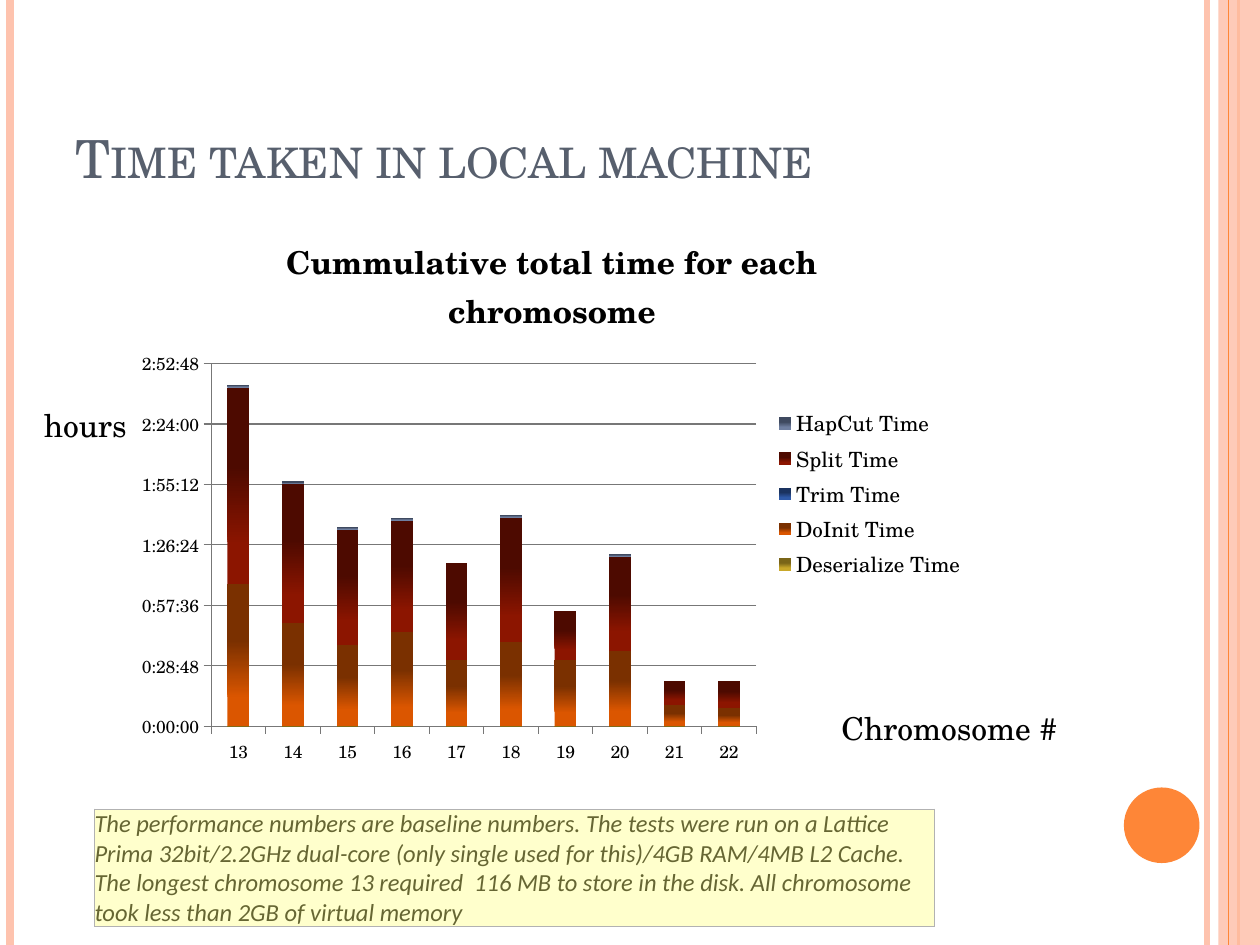
from lxml.etree import SubElement
from pptx import Presentation
from pptx.chart.data import CategoryChartData
from pptx.dml.color import RGBColor
from pptx.enum.chart import XL_CHART_TYPE as ChartType, XL_LEGEND_POSITION as LegendPos, XL_TICK_MARK as Tick
from pptx.enum.shapes import MSO_CONNECTOR as Connector, MSO_SHAPE as Shape
from pptx.enum.text import MSO_ANCHOR as Anchor
from pptx.oxml import parse_xml
from pptx.oxml.ns import nsdecls, qn
from pptx.util import Inches, Pt

WIDTH, HEIGHT = 10, 7.5
SERIF, SANS = "TeX Gyre Schola", "Calibri"
PEACH, ORANGE, BLACK, GRID = "FEC3AE", "FE8637", "000000", "777777"

# x, colour, points
RULES_BELOW = [(9.58, PEACH, 3), (0.08, PEACH, 4.5), (9.83, ORANGE, 1.5)]
RULES_ABOVE = [(9.75, ORANGE, 0.75)]

# text, box, size, colour, extra run attributes, anchor
LABELS = [
    ("Time taken in local machine", (0.5, 0.3, 8.17, 1.25), 30, "575F6D", {"cap": "small"}, Anchor.BOTTOM),
    ("Chromosome #", (6.58, 5.58, 2.17, 0.4), 18, BLACK, {}, Anchor.TOP),
    ("hours", (0.25, 3.17, 0.92, 0.4), 18, BLACK, {}, Anchor.TOP),
]

CHART_TITLE = "Cummulative total time for each chromosome"
CHART_BOX = (1, 1.67, 6.76, 4.5)
PLOT_SHARES = {"x": 0.1, "y": 0.27, "w": 0.64, "h": 0.64}
CHROMOSOMES = [str(number) for number in range(13, 23)]
# name, share of a day per chromosome, bright and dark end of the bar
STEPS = [
    ("Deserialize Time", [0] * 10, "C9A82A", "7A6518"),
    ("DoInit Time", [0.047, 0.034, 0.027, 0.031, 0.022, 0.028, 0.022, 0.025, 0.007, 0.006], "DB5600", "7A3000"),
    ("Trim Time", [0] * 10, "2F5AA8", "1A3360"),
    ("Split Time", [0.065, 0.046, 0.038, 0.037, 0.032, 0.041, 0.016, 0.031, 0.008, 0.009], "8C1500", "4D0A00"),
    ("HapCut Time", [0.001, 0.001, 0.001, 0.001, 0, 0.001, 0, 0.001, 0, 0], "6F7FA0", "3F4A60"),
]

NOTE_BOX = (0.75, 6.42, 6.67, 0.93)
NOTES = [
    "The performance numbers are baseline numbers. The tests were run on a Lattice Prima "
    "32bit/2.2GHz dual-core (only single used for this)/4GB RAM/4MB L2 Cache.",
    "The longest chromosome 13 required  116 MB to store in the disk. "
    "All chromosome took less than 2GB of virtual memory",
]


def rgb(code):
    return RGBColor.from_string(code)


def inches(box):
    return [Inches(length) for length in box]


def style_font(font, color=BLACK, **formats):
    font.color.rgb = rgb(color)
    for attribute, value in formats.items():
        setattr(font, attribute, value)


def add_rules(slide, rules):
    for x, color, points in rules:
        rule = slide.shapes.add_connector(Connector.STRAIGHT, *inches((x, 0, x, HEIGHT)))
        rule.line.color.rgb = rgb(color)
        rule.line.width = Pt(points)
        SubElement(rule.element.spPr, qn("a:effectLst"))


def add_solid(slide, preset, box, color, opacity=100):
    solid = slide.shapes.add_shape(preset, *inches(box))
    solid.shadow.inherit = False
    solid.fill.solid()
    solid.fill.fore_color.rgb = rgb(color)
    solid.line.fill.background()
    if opacity < 100:
        tint = solid.element.spPr.find(qn("a:solidFill"))[0]
        SubElement(tint, qn("a:alpha"), val=str(opacity * 1000))


def add_label(slide, text, box, size, color, extras, anchor):
    frame = slide.shapes.add_textbox(*inches(box)).text_frame
    frame.word_wrap = True
    frame.vertical_anchor = anchor
    run = frame.paragraphs[0].add_run()
    run.text = text
    style_font(run.font, color, name=SERIF, size=Pt(size))
    for attribute, value in extras.items():
        run.font._element.set(attribute, value)


def place_plot(chart):
    """Fix the inner plot area at its shares of the chart frame."""
    plot_area = chart._chartSpace.chart.plotArea
    for old in plot_area.findall(qn("c:layout")):
        plot_area.remove(old)
    parts = '<c:layoutTarget val="inner"/><c:xMode val="edge"/><c:yMode val="edge"/>'
    parts += "".join(f'<c:{side} val="{share}"/>' for side, share in PLOT_SHARES.items())
    layout = f'<c:layout {nsdecls("c")}><c:manualLayout>{parts}</c:manualLayout></c:layout>'
    plot_area.insert(0, parse_xml(layout))


def add_time_chart(slide):
    data = CategoryChartData(number_format="h:mm:ss")
    data.categories = CHROMOSOMES
    for name, times, _, _ in STEPS:
        data.add_series(name, times)
    chart = slide.shapes.add_chart(ChartType.COLUMN_STACKED, *inches(CHART_BOX), data).chart
    style_font(chart.font, name=SERIF, size=Pt(10))

    chart.has_title = True
    title = chart.chart_title.text_frame
    title.text = CHART_TITLE
    style_font(title.paragraphs[0].runs[0].font, name=SERIF, size=Pt(18), bold=True)

    chart.has_legend = True
    chart.legend.position = LegendPos.RIGHT
    chart.legend.include_in_layout = False
    style_font(chart.legend.font, name=SERIF, size=Pt(12))

    hours = chart.value_axis
    for attribute, value in {"minimum_scale": 0, "maximum_scale": 0.12, "major_unit": 0.02}.items():
        setattr(hours, attribute, value)
    hours.tick_labels.number_format = "h:mm:ss"
    hours.tick_labels.number_format_is_linked = False
    for axis in (hours, chart.category_axis):
        axis.major_tick_mark = Tick.OUTSIDE
        axis.format.line.color.rgb = rgb(GRID)
    hours.major_gridlines.format.line.color.rgb = rgb(GRID)

    plot = chart.plots[0]
    plot.vary_by_categories = False
    plot.overlap, plot.gap_width = 100, 150
    for series, (_, _, bright, dark) in zip(plot.series, STEPS):
        fill = series.format.fill
        fill.gradient()
        fill.gradient_angle = 90
        for stop, color, position in zip(fill.gradient_stops, (bright, dark), (0.2, 0.6)):
            stop.color.rgb = rgb(color)
            stop.position = position
    place_plot(chart)


def add_note(slide):
    table = slide.shapes.add_table(1, 1, *inches(NOTE_BOX)).table
    table.first_row = table.horz_banding = False
    cell = table.cell(0, 0)
    for side in ("left", "right", "top", "bottom"):
        setattr(cell, f"margin_{side}", 0)
    cell.vertical_anchor = Anchor.BOTTOM
    cell.text = "\n".join(NOTES)
    for paragraph in cell.text_frame.paragraphs:
        style_font(paragraph.runs[0].font, "666633", name=SANS, size=Pt(14), italic=True, bold=False)
    properties = cell._tc.get_or_add_tcPr()
    for edge in ("lnL", "lnR", "lnT", "lnB"):
        border = SubElement(properties, qn(f"a:{edge}"), w=str(Pt(0.5)))
        SubElement(SubElement(border, qn("a:solidFill")), qn("a:srgbClr"), val="B2B2B2")
    cell.fill.solid()
    cell.fill.fore_color.rgb = rgb("FFFFCC")


def main():
    deck = Presentation()
    deck.slide_width, deck.slide_height = inches((WIDTH, HEIGHT))
    slide = deck.slides.add_slide(deck.slide_layouts[6])
    add_rules(slide, RULES_BELOW)
    add_solid(slide, Shape.RECTANGLE, (9.67, 0, 0.33, HEIGHT), PEACH, opacity=87)
    add_rules(slide, RULES_ABOVE)
    add_solid(slide, Shape.OVAL, (8.92, 6.25, 0.6, 0.6), ORANGE)
    title, *axis_names = LABELS
    add_label(slide, *title)
    add_time_chart(slide)
    for axis_name in axis_names:
        add_label(slide, *axis_name)
    add_note(slide)
    deck.save("out.pptx")


if __name__ == "__main__":
    main()
